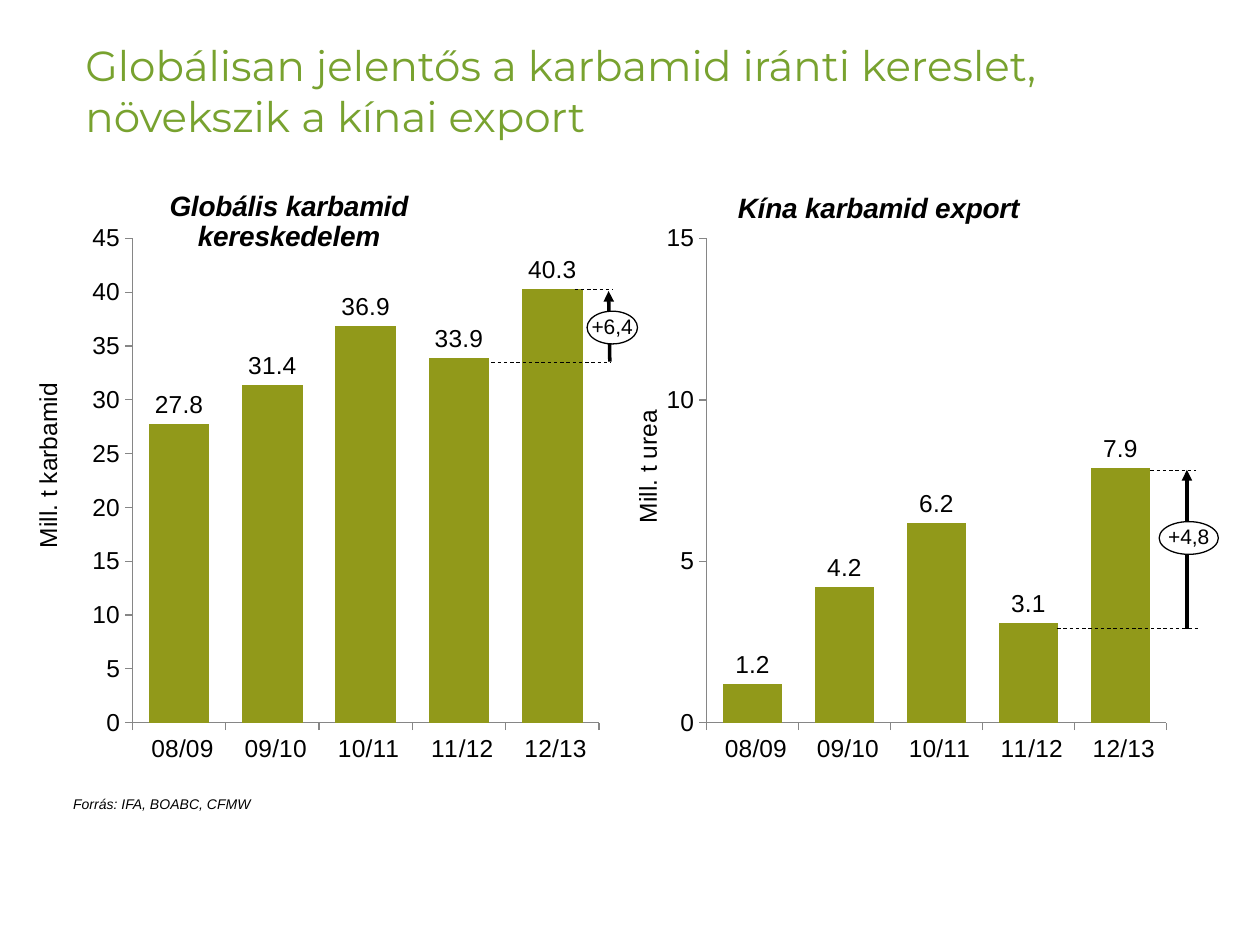
from lxml import etree
from pptx import Presentation
from pptx.chart.data import CategoryChartData
from pptx.dml.color import RGBColor
from pptx.enum.chart import XL_CHART_TYPE, XL_LABEL_POSITION as LabelPos, XL_TICK_MARK as Tick
from pptx.enum.dml import MSO_LINE
from pptx.enum.shapes import MSO_CONNECTOR, MSO_SHAPE
from pptx.enum.text import MSO_ANCHOR as Anchor, PP_ALIGN as Align
from pptx.oxml import parse_xml
from pptx.oxml.ns import nsdecls, qn
from pptx.util import Inches, Pt

BLACK = RGBColor(0, 0, 0)
WHITE = RGBColor(255, 255, 255)
GREY = RGBColor(0x86, 0x86, 0x86)
OLIVE = RGBColor(0x91, 0x99, 0x1A)
GREEN = RGBColor(0x78, 0xA2, 0x2F)

prs = Presentation()
prs.slide_width, prs.slide_height = Inches(10), Inches(7.5)
s = prs.slides.add_slide(prs.slide_layouts[6])


def write(sp, text, size=14, font="Arial", color=BLACK, italic=False, align=Align.LEFT,
          anchor=Anchor.TOP, insets=(0.1, 0.05, 0.1, 0.05), wrap=False, spacing=None):
    tf = sp.text_frame
    tf.word_wrap = wrap
    tf.vertical_anchor = anchor
    tf.margin_left, tf.margin_top, tf.margin_right, tf.margin_bottom = map(Inches, insets)
    p = tf.paragraphs[0]
    p.alignment, p.line_spacing = align, spacing
    r = p.add_run()
    r.text = text
    r.font.name, r.font.size, r.font.italic = font, Pt(size), italic
    r.font.color.rgb = color


def layout(**values):
    """Manual chart layout; x, y, w and h are fractions of the chart."""
    target = '<c:layoutTarget val="inner"/>' if "w" in values else ""
    modes = "".join(f'<c:{k}Mode val="edge"/>' for k in "xy")
    sizes = "".join(f'<c:{k} val="{v}"/>' for k, v in values.items())
    return parse_xml(f'<c:layout {nsdecls("c")}><c:manualLayout>{target}{modes}{sizes}'
                     '</c:manualLayout></c:layout>')


# Column charts: left, title, values, axis maximum, label format, plot left and width
seasons = [" 08/09", " 09/10", " 10/11", " 11/12", " 12/13"]
charts = [
    (0.58, "Globális karbamid\nkereskedelem", (27.8, 31.4, 36.9, 33.9, 40.3), 45, "General",
     0.109, 0.855),
    (5.08, "Kína karbamid export", (1.2, 4.2, 6.2, 3.1, 7.9), 15, "#,##0.0", 0.122, 0.843),
]
for left, title, values, top, fmt, plot_x, plot_w in charts:
    data = CategoryChartData()
    data.categories = seasons
    data.add_series("Series 1", values)
    chart = s.shapes.add_chart(XL_CHART_TYPE.COLUMN_CLUSTERED, Inches(left), Inches(1.32),
                               Inches(4.33), Inches(4.94), data).chart
    chart.has_legend = False
    chart.font.name, chart.font.size = "Arial", Pt(18)
    chart.font.color.rgb = BLACK

    tf = chart.chart_title.text_frame
    tf.text = title
    for p in tf.paragraphs:
        p.alignment = Align.CENTER
        for r in p.runs:
            r.font.name, r.font.size = "Arial", Pt(16)
            r.font.bold = r.font.italic = True
            r.font.color.rgb = BLACK
    chart.chart_title.include_in_layout = False
    title_tx = chart.element.find(f".//{qn('c:title')}/{qn('c:tx')}")
    for old in title_tx.getparent().findall(qn("c:layout")):
        title_tx.getparent().remove(old)
    title_tx.addnext(layout(x=0.17, y=0.03))

    plot_area = chart.element.find(f".//{qn('c:plotArea')}")
    for old in plot_area.findall(qn("c:layout")):
        plot_area.remove(old)
    plot_area.insert(0, layout(x=plot_x, y=0.116, w=plot_w, h=0.778))

    for axis in (chart.category_axis, chart.value_axis):
        axis.has_major_gridlines = False
        axis.major_tick_mark, axis.minor_tick_mark = Tick.OUTSIDE, Tick.NONE
        axis.tick_labels.font.size = Pt(14)
        axis.format.line.color.rgb = GREY
        axis.format.line.width = Pt(0.75)
    axis = chart.value_axis
    axis.minimum_scale, axis.maximum_scale, axis.major_unit = 0, top, 5

    plot = chart.plots[0]
    plot.gap_width = 54
    plot.vary_by_categories = False
    fill = plot.series[0].format.fill
    fill.solid()
    fill.fore_color.rgb = OLIVE
    plot.has_data_labels = True
    labels = plot.data_labels
    labels.show_value = True
    labels.position = LabelPos.OUTSIDE_END
    labels.number_format, labels.number_format_is_linked = fmt, False
    labels.font.size = Pt(14)

# Growth markers: two dashed levels, an arrow between them and a bubble on top
markers = [
    ((3.9, 2.88, 4.85, 2.88), (4.56, 2.3, 4.86, 2.3), (4.84, 2.87, 4.83, 2.31),
     (4.66, 2.47, 0.4, 0.26), "+6,4"),
    ((8.39, 4.99, 9.51, 4.99), (9.13, 3.73, 9.49, 3.73), (9.42, 4.99, 9.42, 3.73),
     (9.2, 4.14, 0.47, 0.26), "+4,8"),
]
for low, high, arrow, bubble, change in markers:
    for ends in (low, high, arrow):
        line = s.shapes.add_connector(MSO_CONNECTOR.STRAIGHT, *map(Inches, ends))
        line.line.color.rgb = BLACK
        line.line.width = Pt(2 if ends is arrow else 0.5)
        if ends is arrow:
            etree.SubElement(line.line._get_or_add_ln(), qn("a:tailEnd"), type="triangle")
        else:
            line.line.dash_style = MSO_LINE.DASH
        etree.SubElement(line._element.spPr, qn("a:effectLst"))
    sp = s.shapes.add_shape(MSO_SHAPE.OVAL, *map(Inches, bubble))
    sp.shadow.inherit = False
    sp.fill.solid()
    sp.fill.fore_color.rgb = WHITE
    sp.line.color.rgb = BLACK
    sp.line.width = Pt(0.75)
    write(sp, change, size=12, align=Align.CENTER, anchor=Anchor.MIDDLE,
          insets=(0, 0, 0, 0), spacing=0.9)

# Axis captions, slide title and source note
texts = [
    ((-0.38, 3.52, 1.52, 0.34), 270, "Mill. t karbamid", {}),
    ((4.59, 3.53, 1.1, 0.34), 270, "Mill. t urea", {}),
    ((0.58, 0.25, 8.83, 0.93), 0,
     "Globálisan jelentős a karbamid iránti kereslet, növekszik a kínai export",
     dict(size=24, font="Montserrat", color=GREEN, anchor=Anchor.MIDDLE, wrap=True)),
    ((0.58, 6.27, 1.55, 0.21), 0, "Forrás: IFA, BOABC, CFMW",
     dict(size=8, italic=True, insets=(0, 0.04, 0.12, 0.04))),
]
for box, rotation, text, style in texts:
    sp = s.shapes.add_textbox(*map(Inches, box))
    sp.rotation = rotation
    write(sp, text, **style)

prs.save("out.pptx")
